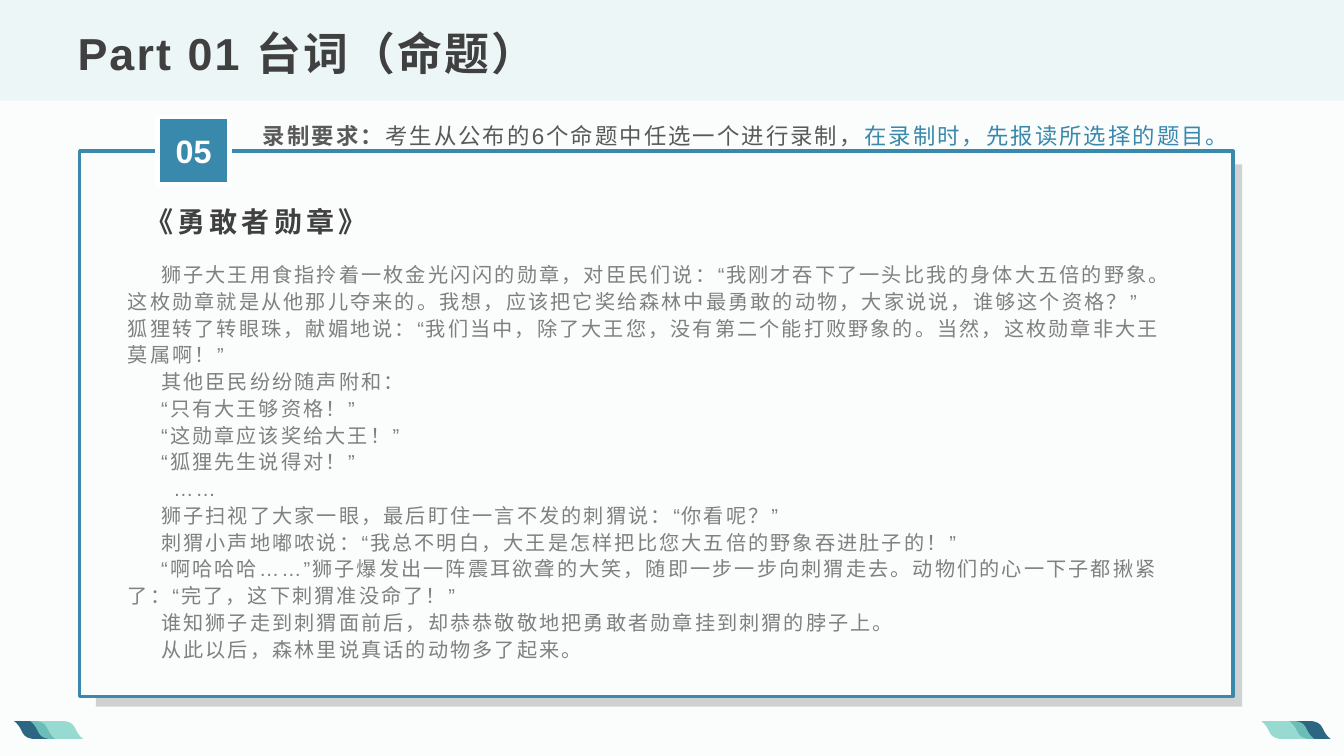
import pptx
import pptx.util
import pptx.dml.color
import pptx.enum.lang
import pptx.enum.shapes
import pptx.enum.text
import pptx.oxml.ns
from lxml import etree

Pt, Inches = pptx.util.Pt, pptx.util.Inches
RGBColor = pptx.dml.color.RGBColor
ALIGN, ANCHOR = pptx.enum.text.PP_ALIGN, pptx.enum.text.MSO_ANCHOR
qn = pptx.oxml.ns.qn

WIDTH, HEIGHT = Inches(13.33), Inches(7.5)
PAPER = RGBColor(0xFB, 0xFC, 0xFC)
MIST = RGBColor(0xED, 0xF6, 0xF7)
BLUE = RGBColor(0x39, 0x89, 0xAD)
NAVY = RGBColor(0x2B, 0x67, 0x82)
MINT = RGBColor(0x7D, 0xD2, 0xC6)
SILVER = RGBColor(0xBF, 0xBF, 0xBF)
WHITE = RGBColor(0xFF, 0xFF, 0xFF)
INK = RGBColor(0x40, 0x40, 0x40)
SLATE = RGBColor(0x59, 0x59, 0x59)
GREY = RGBColor(0x80, 0x80, 0x80)

FIRST_LINE = 0.33
ELLIPSIS_LINE = 0.45
STORY = [
    (FIRST_LINE, "狮子大王用食指拎着一枚金光闪闪的勋章，对臣民们说：“我刚才吞下了一头比我的身体大五倍的野象。"
     "这枚勋章就是从他那儿夺来的。我想，应该把它奖给森林中最勇敢的动物，大家说说，谁够这个资格？”"),
    (0, "狐狸转了转眼珠，献媚地说：“我们当中，除了大王您，没有第二个能打败野象的。"
     "当然，这枚勋章非大王莫属啊！”"),
    (FIRST_LINE, "其他臣民纷纷随声附和："),
    (FIRST_LINE, "“只有大王够资格！”"),
    (FIRST_LINE, "“这勋章应该奖给大王！”"),
    (FIRST_LINE, "“狐狸先生说得对！”"),
    (ELLIPSIS_LINE, "……"),
    (FIRST_LINE, "狮子扫视了大家一眼，最后盯住一言不发的刺猬说：“你看呢？”"),
    (FIRST_LINE, "刺猬小声地嘟哝说：“我总不明白，大王是怎样把比您大五倍的野象吞进肚子的！”"),
    (FIRST_LINE, "“啊哈哈哈……”狮子爆发出一阵震耳欲聋的大笑，随即一步一步向刺猬走去。"
     "动物们的心一下子都揪紧了：“完了，这下刺猬准没命了！”"),
    (FIRST_LINE, "谁知狮子走到刺猬面前后，却恭恭敬敬地把勇敢者勋章挂到刺猬的脖子上。"),
    (FIRST_LINE, "从此以后，森林里说真话的动物多了起来。"),
]

# One side of a leaf as two joined Bezier curves, in leaf heights
LEAF_SIDE = [(0, 0), (0, 0), (0.23, 0.14), (0.4, 0.5), (0.57, 0.86), (0.69, 0.93), (1.03, 1)]
CURVE_STEPS = 8


def across(percent):
    return round(WIDTH * percent / 100)


def down(percent):
    return round(HEIGHT * percent / 100)


def place(left, top, width, height):
    """Turn percentages of the slide into lengths."""
    return across(left), down(top), across(width), down(height)


def paint(shape, fill, opacity=100, line=None, line_width=0):
    shape.shadow.inherit = False
    shape.fill.solid()
    shape.fill.fore_color.rgb = fill
    if opacity < 100:
        color = shape.fill._xPr.find(".//" + qn("a:srgbClr"))
        etree.SubElement(color, qn("a:alpha")).set("val", str(opacity * 1000))
    if line is None:
        shape.line.fill.background()
    else:
        shape.line.color.rgb = line
        shape.line.width = Pt(line_width)


def add_panel(slide, area, fill, **style):
    panel = slide.shapes.add_shape(pptx.enum.shapes.MSO_SHAPE.RECTANGLE, *place(*area))
    paint(panel, fill, **style)


def bezier(points, t):
    """Point at t on the curve with the given control points."""
    while len(points) > 1:
        points = [tuple(a + (b - a) * t for a, b in zip(p, q))
                  for p, q in zip(points, points[1:])]
    return points[0]


def add_leaf(slide, area, fill, opacity=100):
    """Slanted leaf whose right side is its left side turned half round."""
    left, top, width, height = place(*area)
    side = [bezier(LEAF_SIDE[start:start + 4], step / CURVE_STEPS)
            for start in (0, 3) for step in range(CURVE_STEPS + 1)]
    side = [(x * height, y * height) for x, y in side]
    outline = side + [(width - x, height - y) for x, y in side]
    outline = [(round(left + x), round(top + y)) for x, y in outline]
    builder = slide.shapes.build_freeform(*outline[0])
    builder.add_line_segments(outline[1:], close=True)
    paint(builder.convert_to_shape(), fill, opacity)


def add_run(paragraph, text, size, color, bold, tracking):
    run = paragraph.add_run()
    run.text = text
    run.font.size = Pt(size)
    run.font.bold = bold
    run.font.color.rgb = color
    run.font.name = "Arial"
    run.font.language_id = pptx.enum.lang.MSO_LANGUAGE_ID.SIMPLIFIED_CHINESE
    properties = run._r.get_or_add_rPr()
    properties.set("spc", str(round(tracking * 100)))
    etree.SubElement(properties, qn("a:ea")).set("typeface", "Arial")


def add_text(slide, area, paragraphs, size, color, bold=False, tracking=0, spacing=1.0,
             align=ALIGN.LEFT, anchor=ANCHOR.TOP, margin_top=0.05, margin_bottom=0.05):
    """Each paragraph is (indent, runs); each run is a text or (text, color, bold)."""
    frame = slide.shapes.add_textbox(*place(*area)).text_frame
    frame.word_wrap = True
    frame.vertical_anchor = anchor
    frame.margin_top, frame.margin_bottom = Inches(margin_top), Inches(margin_bottom)
    for number, (indent, runs) in enumerate(paragraphs):
        paragraph = frame.add_paragraph() if number else frame.paragraphs[0]
        paragraph.alignment = align
        paragraph.line_spacing = spacing
        if indent:
            paragraph._p.get_or_add_pPr().set("indent", str(Inches(indent)))
        for run in [runs] if isinstance(runs, str) else runs:
            text, run_color, run_bold = (run, color, bold) if isinstance(run, str) else run
            add_run(paragraph, text, size, run_color, run_bold, tracking)


def main():
    deck = pptx.Presentation()
    deck.slide_width, deck.slide_height = WIDTH, HEIGHT
    slide = deck.slides.add_slide(deck.slide_layouts[6])
    slide.background.fill.solid()
    slide.background.fill.fore_color.rgb = PAPER

    add_panel(slide, (0, 0, 100, 13.33), MIST)
    for navy_left, mint_left in ((1.05, 2.25), (95.95, 93.85)):
        add_leaf(slide, (navy_left, 95.4, 3.05, 2.33), NAVY)
        add_leaf(slide, (mint_left, 95.4, 3.93, 2.33), MINT, opacity=80)

    add_panel(slide, (7.13, 21.73, 85.3, 71.73), SILVER, opacity=70)
    add_panel(slide, (5.93, 20, 85.82, 72.13), PAPER, line=BLUE, line_width=2.5)
    add_panel(slide, (11.7, 15.47, 5.4, 8.93), BLUE, line=WHITE, line_width=3.5)

    add_text(slide, (12.23, 16.13, 4.35, 8.53), [(0, "05")], size=23.1, color=WHITE,
             bold=True, spacing=1.1, align=ALIGN.CENTER)
    add_text(slide, (8.78, 34.4, 79.6, 53.87), STORY, size=14.4, color=GREY,
             tracking=1.5, spacing=Pt(19.1), margin_top=0)
    add_text(slide, (10.05, 24.4, 33.76, 7.07), [(0, "《勇敢者勋章》")], size=20, color=INK,
             bold=True, tracking=3, spacing=1.2, anchor=ANCHOR.BOTTOM, margin_bottom=0)
    add_text(slide, (5.03, 2.27, 90.02, 8.93), [(0, "Part 01 台词（命题）")], size=32, color=INK,
             bold=True, tracking=1.5, spacing=0.9, anchor=ANCHOR.BOTTOM)
    requirement = [("录制要求：", SLATE, True),
                   "考生从公布的6个命题中任选一个进行录制，",
                   ("在录制时，先报读所选择的题目。", BLUE, False)]
    add_text(slide, (18.83, 14.8, 80.5, 5.6), [(0, requirement)], size=16, color=SLATE,
             tracking=1.5, spacing=1.2)

    deck.save("out.pptx")


if __name__ == "__main__":
    main()
